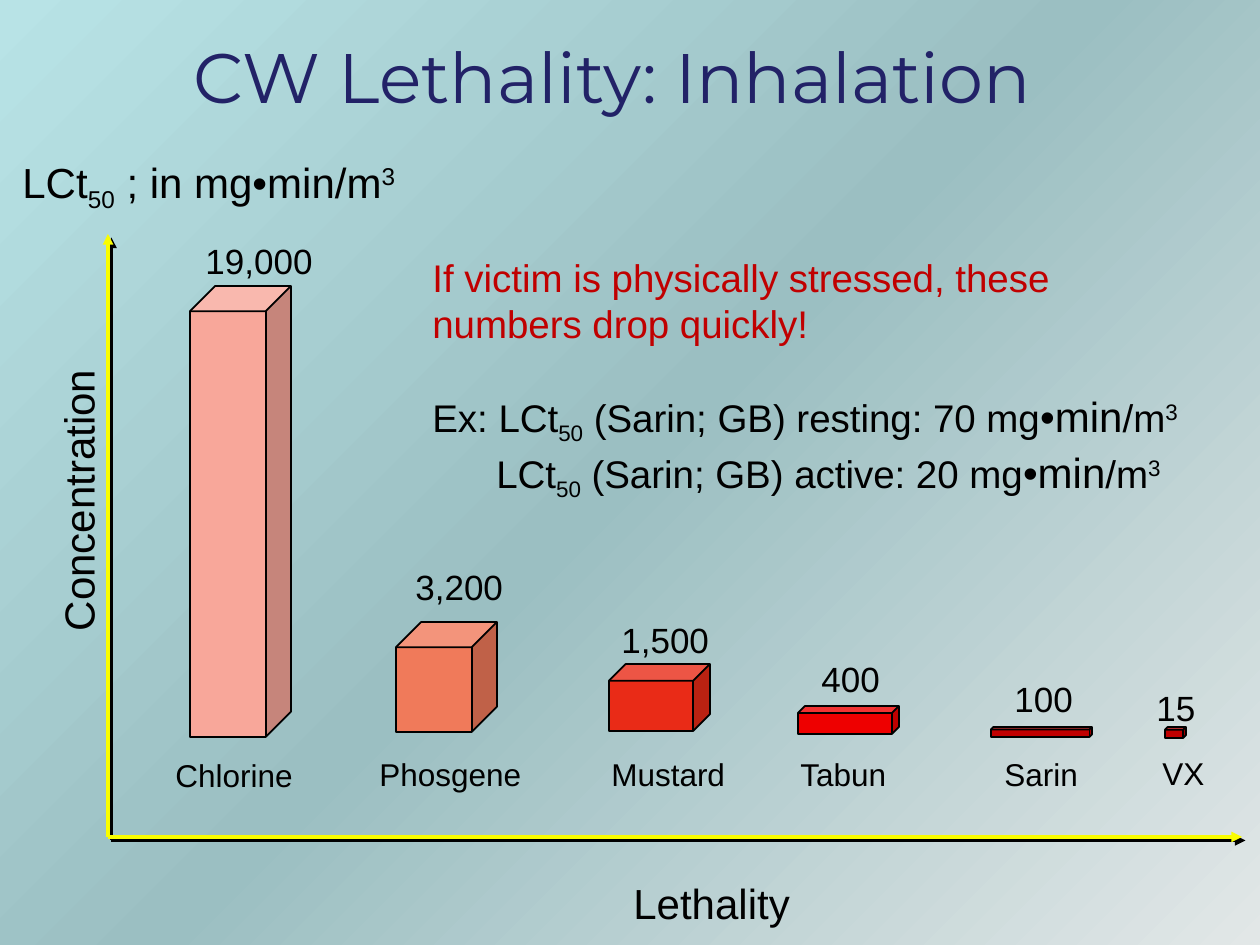
from copy import deepcopy
from dataclasses import dataclass

from lxml import etree
from pptx import Presentation
from pptx import util as u
from pptx.dml.color import RGBColor
from pptx.enum import shapes, text
from pptx.oxml import ns

SCALE = u.Inches(1) / 126


def px(length):
    return u.Emu(round(length * SCALE))


@dataclass(frozen=True)
class Theme:
    title_font: str = "Montserrat"
    body_font: str = "Arial"
    title: str = "222267"
    ink: str = "000000"
    warning: str = "C00000"
    axis: str = "FAFD00"
    background: tuple = ("B8E3E6", "9BBFC2", "E2E7E7")
    title_size: int = 40
    label_size: int = 24
    note_size: int = 22
    value_size: int = 20
    name_size: int = 18


class SlideBuilder:
    """Draws styled elements on the current slide."""

    def __init__(self, slide, theme):
        self.slide = slide
        self.theme = theme

    def background(self):
        fill = self.slide.background.fill
        fill.gradient()
        stop_list = self.slide.element.xpath(".//a:gsLst")[0]
        stop_list.append(deepcopy(stop_list[0]))
        for index, (stop, color) in enumerate(zip(fill.gradient_stops, self.theme.background)):
            stop.position = index / 2
            stop.color.rgb = RGBColor.from_string(color)
        fill.gradient_angle = 315

    def textbox(self, box, wrap=False, grow=True):
        shape = self.slide.shapes.add_textbox(*map(px, box))
        frame = shape.text_frame
        frame.word_wrap = wrap
        if grow:
            frame.auto_size = text.MSO_AUTO_SIZE.SHAPE_TO_FIT_TEXT
        return shape

    def runs(self, paragraph, parts, size, color=None, font=None):
        for part in parts:
            words, baseline, part_size = (*part, 0, size)[:3] if len(part) < 3 else part
            run = paragraph.add_run()
            run.text = words
            run.font.size = u.Pt(part_size)
            run.font.name = font or self.theme.body_font
            run.font.color.rgb = RGBColor.from_string(color or self.theme.ink)
            if baseline:
                run.font._element.set("baseline", str(baseline * 1000))

    def title(self, words, box):
        frame = self.textbox(box, wrap=True, grow=False).text_frame
        frame.vertical_anchor = text.MSO_ANCHOR.MIDDLE
        paragraph = frame.paragraphs[0]
        paragraph.alignment = text.PP_ALIGN.CENTER
        theme = self.theme
        self.runs(paragraph, [(words,)], theme.title_size, theme.title, theme.title_font)

    def label(self, parts, box, size, rotation=0):
        shape = self.textbox(box)
        shape.rotation = rotation
        self.runs(shape.text_frame.paragraphs[0], parts, size)

    def note(self, warning, examples, box, gap, indent):
        frame = self.textbox(box, wrap=True).text_frame
        size = self.theme.note_size
        self.runs(frame.paragraphs[0], [(warning,)], size, self.theme.warning)
        for index, (lead, condition) in enumerate(examples):
            paragraph = frame.add_paragraph()
            if index == 0:
                paragraph.space_before = u.Pt(gap)
            else:
                paragraph._p.get_or_add_pPr().set("marL", str(px(indent)))
            parts = [(lead,), ("50", -25, size), (condition,),
                     ("•min", 0, self.theme.label_size), ("/m",), ("3", 30, size)]
            self.runs(paragraph, parts, size)

    def bar(self, box, color):
        shape = self.slide.shapes.add_shape(shapes.MSO_SHAPE.CUBE, *map(px, box))
        shape.shadow.inherit = False
        shape.fill.solid()
        shape.fill.fore_color.rgb = RGBColor.from_string(color)
        shape.line.color.rgb = RGBColor.from_string(self.theme.ink)
        shape.line.width = u.Pt(1)

    def axis(self, tip, origin):
        line = self.slide.shapes.add_connector(
            shapes.MSO_CONNECTOR.STRAIGHT, *map(px, (*tip, *origin)))
        line.line.color.rgb = RGBColor.from_string(self.theme.axis)
        line.line.width = u.Pt(2)
        etree.SubElement(line.line._get_or_add_ln(), ns.qn("a:headEnd"), type="triangle")
        effects = etree.SubElement(line._element.spPr, ns.qn("a:effectLst"))
        shadow = etree.SubElement(effects, ns.qn("a:outerShdw"), dist=str(u.Pt(2.8)),
                                  dir="2700000", algn="ctr", rotWithShape="0")
        etree.SubElement(shadow, ns.qn("a:srgbClr"), val=self.theme.ink)


AGENTS = [
    ("Chlorine", (163, 750, 144, 50), "19,000", (193, 233, 134, 54), (190, 286, 101, 451), "F8A79A"),
    ("Phosgene", (367, 749, 169, 50), "3,200", (403, 559, 113, 54), (396, 622, 101, 110), "F07A5A"),
    ("Mustard", (599, 749, 140, 50), "1,500", (609, 612, 113, 54), (609, 664, 101, 67), "E92B17"),
    ("Tabun", (788, 749, 112, 50), "400", (809, 651, 84, 54), (798, 706, 101, 28), "EE0000"),
    ("Sarin", (992, 749, 100, 50), "100", (1002, 671, 84, 54), (991, 727, 101, 10), "C00000"),
    ("VX", (1150, 748, 68, 50), "15", (1144, 680, 64, 54), (1165, 727, 21, 11), "C00000"),
]


def main():
    presentation = Presentation()
    presentation.slide_width, presentation.slide_height = px(1260), px(945)
    slide = presentation.slides.add_slide(presentation.slide_layouts[6])
    theme = Theme()
    builder = SlideBuilder(slide, theme)
    builder.background()
    builder.title("CW Lethality: Inhalation", (11, 34, 1202, 84))

    for name, name_box, value, value_box, bar_box, color in AGENTS:
        builder.bar(bar_box, color)
        builder.label([(name,)], name_box, theme.name_size)
        builder.label([(value,)], value_box, theme.value_size)

    origin = (108, 837)
    for tip in ((108, 234), (1242, 837)):
        builder.axis(tip, origin)

    size = theme.label_size
    unit = [("LCt",), ("50", -25, size), (" ; in mg•min/m",), ("3", 30, size)]
    builder.label(unit, (10, 150, 420, 63), size)
    builder.label([("Concentration",)], (-67, 467, 290, 63), size, rotation=270)
    builder.label([("Lethality",)], (621, 871, 183, 63), size)

    examples = [("Ex: LCt", " (Sarin; GB) resting: 70 mg"),
                ("LCt", " (Sarin; GB) active: 20 mg")]
    builder.note("If victim is physically stressed, these numbers drop quickly!",
                 examples, (420, 248, 794, 255), gap=25, indent=64)
    presentation.save("out.pptx")


if __name__ == "__main__":
    main()
